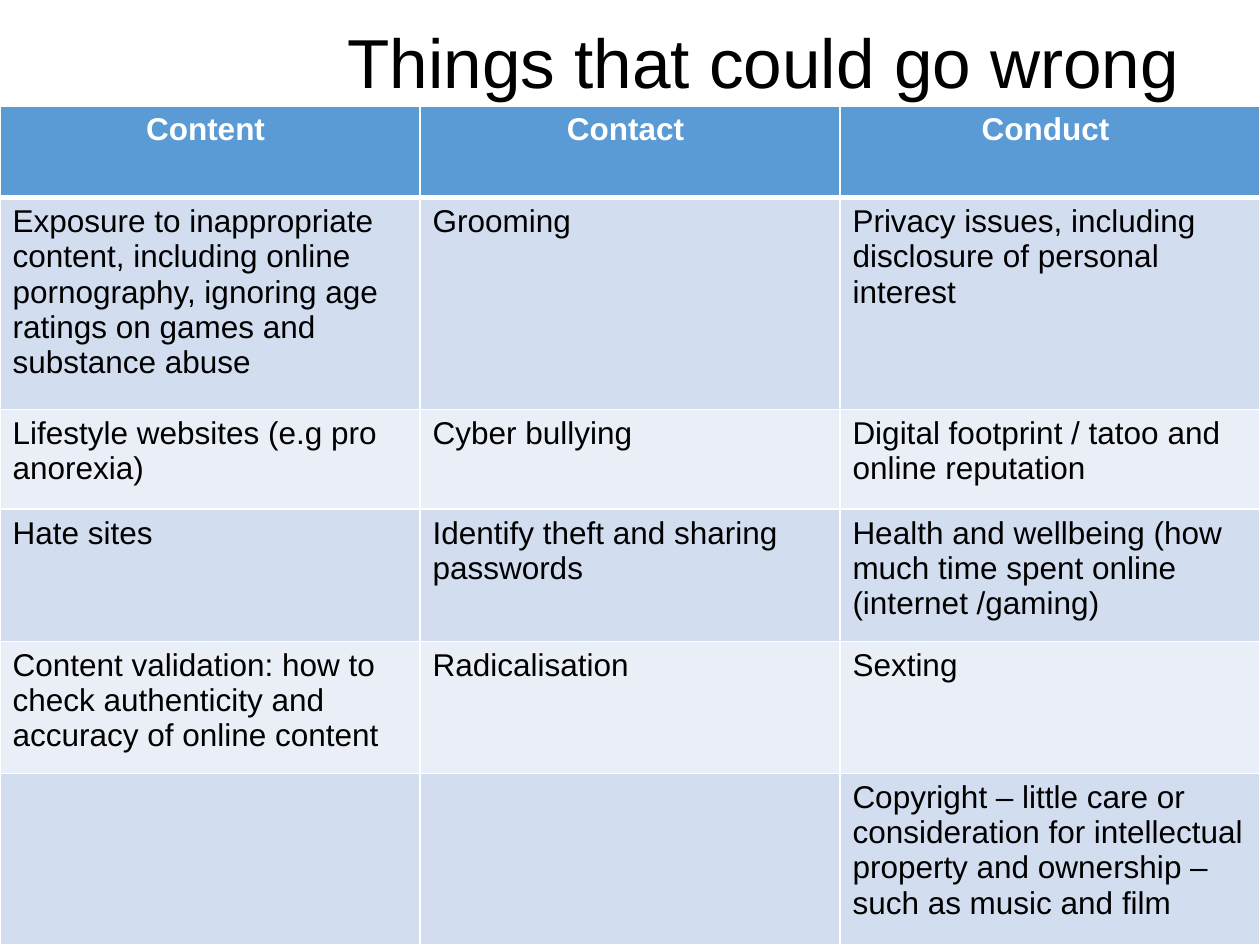
from dataclasses import dataclass

from lxml.etree import SubElement
from pptx import Presentation
from pptx.dml.color import RGBColor
from pptx.enum.text import MSO_ANCHOR as Anchor, PP_ALIGN as Align
from pptx.oxml.ns import qn
from pptx.util import Pt

WHITE = RGBColor(0xFF, 0xFF, 0xFF)
BLACK = RGBColor(0, 0, 0)
HEADER_BLUE = RGBColor(0x5B, 0x9B, 0xD5)
BAND_DARK = RGBColor(0xD2, 0xDE, 0xEF)
BAND_LIGHT = RGBColor(0xEA, 0xEF, 0xF7)
FONT = "Arial"
SLIDE_WIDTH, SLIDE_HEIGHT = 720, 540
TABLE_TOP = 60.5


@dataclass(frozen=True)
class RowStyle:
    fill: RGBColor
    color: RGBColor
    bold: bool
    align: Align
    bottom: float


@dataclass(frozen=True)
class RiskRow:
    height: float
    texts: tuple[str, str, str]


HEADER = RowStyle(HEADER_BLUE, WHITE, True, Align.CENTER, 3)
BANDS = [RowStyle(fill, BLACK, False, Align.LEFT, 1) for fill in (BAND_DARK, BAND_LIGHT)]

RISKS = [
    RiskRow(52.5, ("Content ", "Contact ", "Conduct ")),
    RiskRow(121, (
        "Exposure to inappropriate content, including online pornography, "
        "ignoring age ratings on games and substance abuse",
        "Grooming",
        "Privacy issues, including disclosure of personal interest",
    )),
    RiskRow(57, (
        "Lifestyle websites (e.g pro anorexia)",
        "Cyber bullying",
        "Digital footprint / tatoo and online reputation",
    )),
    RiskRow(75.5, (
        "Hate sites",
        "Identify theft and sharing passwords",
        "Health and wellbeing (how much time spent online (internet /gaming)",
    )),
    RiskRow(75.5, (
        "Content validation: how to check authenticity and accuracy of online content",
        "Radicalisation",
        "Sexting",
    )),
    RiskRow(98, (
        "",
        "",
        "Copyright – little care or consideration for intellectual property "
        "and ownership – such as music and film",
    )),
]


def add_run(paragraph, text: str, size: float, color: RGBColor, bold: bool = False) -> None:
    run = paragraph.add_run()
    run.text = text
    run.font.name = FONT
    run.font.size = Pt(size)
    run.font.bold = bold
    run.font.color.rgb = color


def add_border(cell, side: str, width: float) -> None:
    line = SubElement(cell._tc.get_or_add_tcPr(), qn(f"a:ln{side}"), w=str(Pt(width)))
    SubElement(SubElement(line, qn("a:solidFill")), qn("a:srgbClr"), val=str(WHITE))


def fill_cell(cell, text: str, style: RowStyle, top: float) -> None:
    for side, width in (("L", 1), ("R", 1), ("T", top), ("B", style.bottom)):
        add_border(cell, side, width)
    cell.fill.solid()
    cell.fill.fore_color.rgb = style.fill
    paragraph = cell.text_frame.paragraphs[0]
    paragraph.alignment = style.align
    if text:
        add_run(paragraph, text, 18, style.color, style.bold)


def add_heading(slide) -> None:
    heading = slide.shapes.add_textbox(Pt(191.5), Pt(21.5), Pt(528.5), Pt(33))
    frame = heading.text_frame
    frame.word_wrap = True
    frame.vertical_anchor = Anchor.MIDDLE
    paragraph = frame.paragraphs[0]
    paragraph.line_spacing = 0.9
    add_run(paragraph, "Things that could go wrong", 39.6, BLACK)


def add_risk_table(slide) -> None:
    columns = len(RISKS[0].texts)
    table = slide.shapes.add_table(
        len(RISKS), columns, Pt(0), Pt(TABLE_TOP),
        Pt(SLIDE_WIDTH), Pt(sum(risk.height for risk in RISKS)),
    ).table
    for column in table.columns:
        column.width = Pt(SLIDE_WIDTH / columns)
    top = 1
    for index, risk in enumerate(RISKS):
        style = BANDS[(index - 1) % 2] if index else HEADER
        table.rows[index].height = Pt(risk.height)
        for cell, text in zip(table.rows[index].cells, risk.texts):
            fill_cell(cell, text, style, top)
        top = style.bottom


def main() -> None:
    deck = Presentation()
    deck.slide_width, deck.slide_height = Pt(SLIDE_WIDTH), Pt(SLIDE_HEIGHT)
    slide = deck.slides.add_slide(deck.slide_layouts[6])
    add_heading(slide)
    add_risk_table(slide)
    deck.save("out.pptx")


if __name__ == "__main__":
    main()
